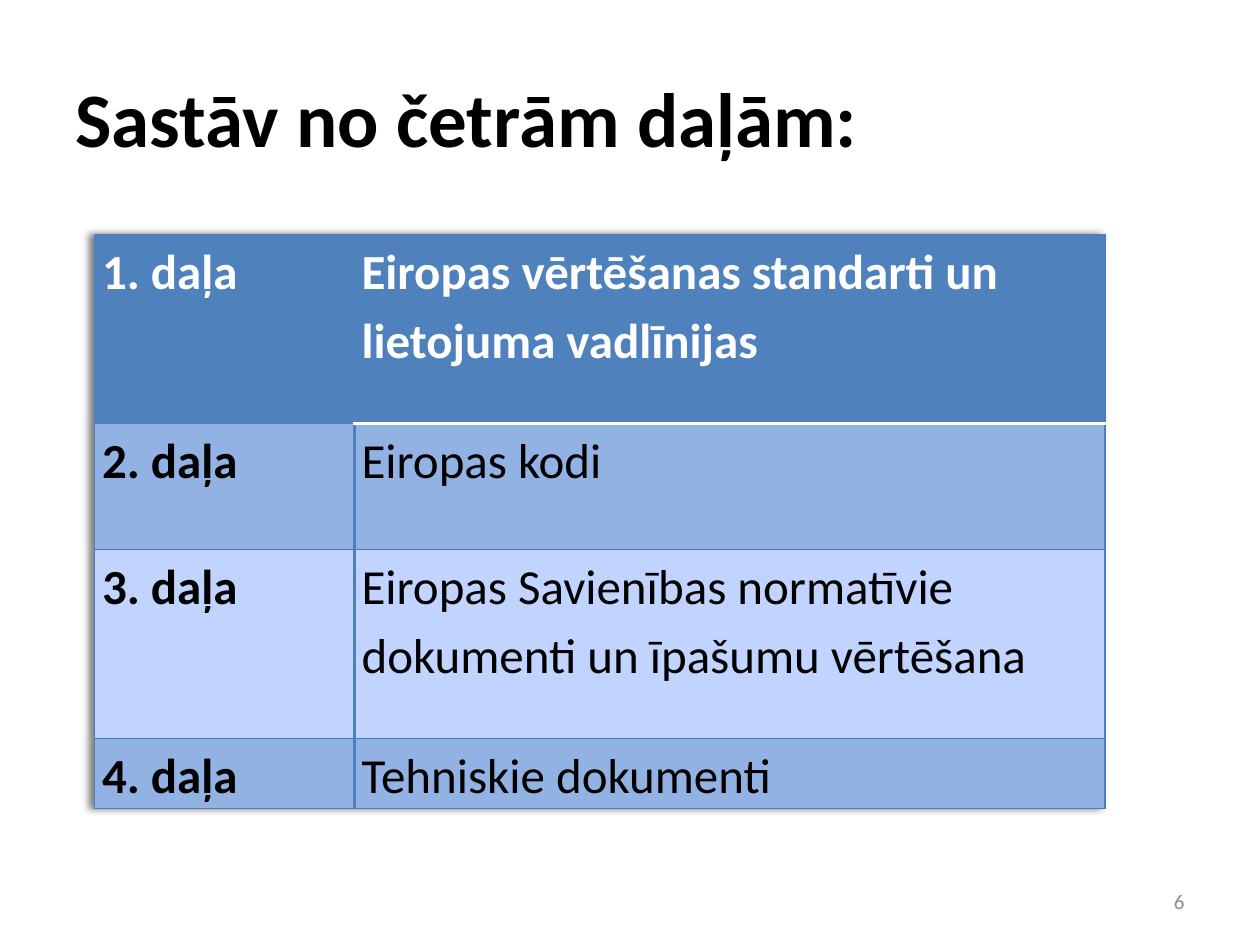
from lxml import etree
from pptx import Presentation
from pptx.dml.color import RGBColor
from pptx.enum.text import MSO_ANCHOR, PP_ALIGN
from pptx.oxml.ns import qn
from pptx.util import Inches, Pt

MIDDLE = MSO_ANCHOR.MIDDLE
LEFT, RIGHT = PP_ALIGN.LEFT, PP_ALIGN.RIGHT

FONT = "Calibri"
COLORS = {
    "black": "000000",
    "white": "FFFFFF",
    "gray": "8C8C8C",
    "header": "4F81BD",
    "band": "93B2E4",
    "plain": "C0D4FF",
    "edge": "4B7EBC",
}

TITLE = "Sastāv no četrām daļām:"
PAGE_NUMBER = "6"
PARTS = [
    ("1. daļa", "Eiropas vērtēšanas standarti un lietojuma vadlīnijas"),
    ("2. daļa", "Eiropas kodi"),
    ("3. daļa", "Eiropas Savienības normatīvie dokumenti un īpašumu vērtēšana"),
    ("4. daļa", "Tehniskie dokumenti"),
]
ROW_FILLS = ["header", "band", "plain", "band"]
ROW_HEIGHTS = [1.5, 1, 1.5, 0.56]
COLUMN_WIDTHS = [2.06, 5.96]
TABLE_LEFT, TABLE_TOP = 0.75, 1.86


def format_text(para, size, color, bold=False):
    for span in para.runs:
        span.font.name = FONT
        span.font.size = Pt(size)
        span.font.bold = bold
        span.font.color.rgb = RGBColor.from_string(COLORS[color])


def add_text(page, text, place, size, color, bold=False, align=LEFT):
    box = page.shapes.add_textbox(*map(Inches, place))
    frame = box.text_frame
    frame.word_wrap = True
    frame.vertical_anchor = MIDDLE
    frame.text = text
    para = frame.paragraphs[0]
    para.alignment = align
    format_text(para, size, color, bold)


def add_border(cell, side, color, width):
    properties = cell._tc.get_or_add_tcPr()
    line = etree.SubElement(properties, qn(f"a:ln{side}"), w=str(Pt(width)))
    fill = etree.SubElement(line, qn("a:solidFill"))
    etree.SubElement(fill, qn("a:srgbClr"), val=COLORS[color])


def add_table_shadow(table):
    effects = etree.Element(qn("a:effectLst"))
    shadow = etree.SubElement(
        effects, qn("a:outerShdw"), blurRad=str(Pt(4)), dist=str(Pt(3)),
        dir="10800000", algn="r", rotWithShape="0")
    color = etree.SubElement(shadow, qn("a:srgbClr"), val=COLORS["black"])
    etree.SubElement(color, qn("a:alpha"), val="50000")
    table._tbl.tblPr.insert(0, effects)


def cell_borders(row, column):
    thin, divider, rule = ("edge", 0.75), ("header", 2), ("white", 2)
    header_rule = rule if column == 1 else thin
    return {
        "L": divider if column == 1 else thin,
        "R": divider if column == 0 else thin,
        "T": header_rule if row == 1 else thin,
        "B": header_rule if row == 0 else thin,
    }


def fill_cell(cell, text, row, column):
    for side, (color, width) in cell_borders(row, column).items():
        add_border(cell, side, color, width)
    cell.fill.solid()
    cell.fill.fore_color.rgb = RGBColor.from_string(COLORS[ROW_FILLS[row]])
    cell.margin_left = cell.margin_right = Inches(0.06)
    cell.margin_top = cell.margin_bottom = 0
    cell.text_frame.text = text
    para = cell.text_frame.paragraphs[0]
    para.line_spacing = 1.15
    color = "white" if row == 0 else "black"
    format_text(para, 28, color, bold=row == 0 or column == 0)


def add_parts_table(page):
    place = (TABLE_LEFT, TABLE_TOP, sum(COLUMN_WIDTHS), sum(ROW_HEIGHTS))
    table = page.shapes.add_table(
        len(PARTS), len(COLUMN_WIDTHS), *map(Inches, place)).table
    table.first_row = table.horz_banding = False
    add_table_shadow(table)
    for column, width in zip(table.columns, COLUMN_WIDTHS):
        column.width = Inches(width)
    for row, height in zip(table.rows, ROW_HEIGHTS):
        row.height = Inches(height)
    for row, texts in enumerate(PARTS):
        for column, text in enumerate(texts):
            fill_cell(table.cell(row, column), text, row, column)


def main():
    deck = Presentation()
    deck.slide_width, deck.slide_height = Inches(10), Inches(7.5)
    page = deck.slides.add_slide(deck.slide_layouts[6])
    add_text(page, TITLE, (0.5, 0.3, 9, 1.25), 44, "black", bold=True)
    add_parts_table(page)
    add_text(page, PAGE_NUMBER, (7.17, 6.95, 2.33, 0.4), 12, "gray", align=RIGHT)
    deck.save("out.pptx")


if __name__ == "__main__":
    main()
